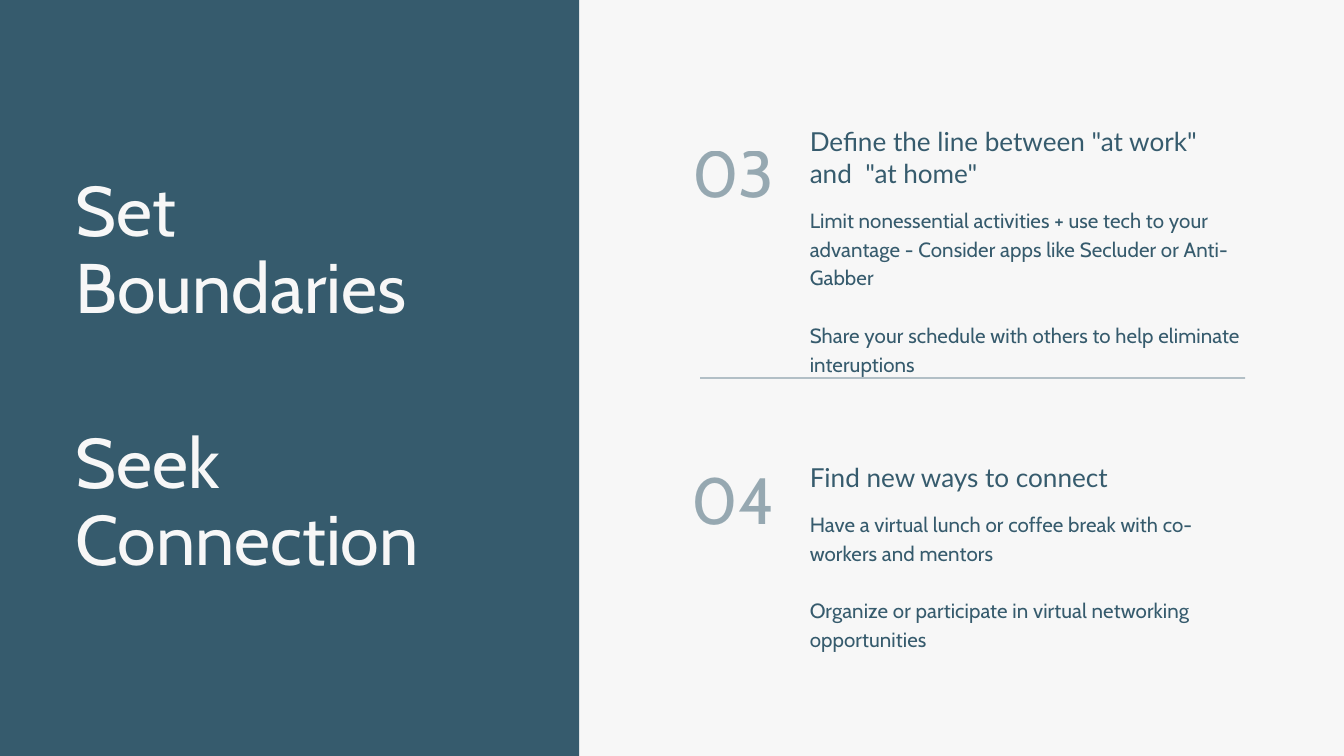
from pptx import Presentation
from pptx.dml.color import RGBColor
from pptx.enum.shapes import MSO_SHAPE as Shape
from pptx.enum.text import MSO_ANCHOR as Anchor, MSO_AUTO_SIZE as Auto, PP_ALIGN as Align
from pptx.oxml.ns import qn
from pptx.util import Inches, Pt
from lxml import etree

TEAL = RGBColor(0x36, 0x5B, 0x6D)
PALE = RGBColor(0xF7, 0xF7, 0xF7)


def place(box, left, top, width, height):
    box.left, box.top = Inches(left), Inches(top)
    box.width, box.height = Inches(width), Inches(height)


def write(box, lines, font, size, lead, color, align=Align.LEFT, track=0):
    """Fill a box with plain paragraphs, one blank line's height apart."""
    frame = box.text_frame
    frame.word_wrap = True
    frame.auto_size = Auto.NONE
    frame.vertical_anchor = Anchor.TOP
    frame.margin_left = frame.margin_right = 0
    frame.margin_top = frame.margin_bottom = 0
    frame.text = "\n".join(lines)
    for i, para in enumerate(frame.paragraphs):
        para.alignment = align
        para.line_spacing = Pt(lead)
        para.space_before = Pt(lead if i else 0)
        para.space_after = Pt(0)
        props = para._p.get_or_add_pPr()
        props.set("marL", "0")
        props.set("indent", "0")
        etree.SubElement(props, qn("a:buNone"))
        for run in para.runs:
            run.font.name = font
            run.font.size = Pt(size)
            run.font.bold = False
            run.font.color.rgb = color
            if track:
                run._r.get_or_add_rPr().set("spc", str(track))


prs = Presentation()
prs.slide_width, prs.slide_height = Inches(20), Inches(11.25)
slide = prs.slides.add_slide(prs.slide_layouts[4])  # title, two heads, two bodies
slide.background.fill.solid()
slide.background.fill.fore_color.rgb = PALE
holders = slide.placeholders

# Side panel and divider, both behind the text
for area in [(0, 0, 8.62, 11.25), (10.42, 5.62, 8.11, 0.01)]:
    block = slide.shapes.add_shape(Shape.RECTANGLE, *map(Inches, area))
    block.shadow.inherit = False
    block.fill.solid()
    block.fill.fore_color.rgb = TEAL
    block.line.fill.background()
    slide.shapes._spTree.insert(2, block._element)

# Panel titles
title = slide.shapes.title
place(title, 1.12, 2.58, 6.39, 2.31)
second = slide.shapes.add_textbox(0, 0, 0, 0)
place(second, 1.12, 6.33, 6.91, 2.31)
for box, text in [(title, "Set Boundaries"), (second, "Seek Connection")]:
    write(box, [text], "Cabin", 75.2, 82.7, PALE)

# Numbered tips: number and its top, head and its top and height, body likewise
tips = [
    ("03", 2.07, 'Define the line between "at work" and  "at home"', 1.87, 0.92,
     ["Limit nonessential activities + use tech to your advantage"
      " - Consider apps like Secluder or Anti-Gabber",
      "Share your schedule with others to help eliminate interuptions"], 3.03, 2.49),
    ("04", 6.93, "Find new ways to connect", 6.86, 0.46,
     ["Have a virtual lunch or coffee break with co-workers and mentors",
      "Organize or participate in virtual networking opportunities"], 7.56, 2.07),
]
for i, (num, num_top, head, head_top, head_high, body, body_top, body_high) in enumerate(tips):
    head_box, body_box = holders[1 + 2 * i], holders[2 + 2 * i]
    place(head_box, 12.05, head_top, 6.48, head_high)
    write(head_box, [head], "Lato", 28, 33.6, TEAL)
    place(body_box, 12.05, body_top, 6.48, body_high)
    write(body_box, body, "Cabin", 22, 30.8, TEAL, track=10)

    num_box = slide.shapes.add_textbox(0, 0, 0, 0)
    place(num_box, 10, num_top, 1.53, 1.1)
    write(num_box, [num], "Cabin", 70, 77, TEAL, Align.RIGHT, track=30)
    for tint in num_box._element.iter(qn("a:srgbClr")):
        etree.SubElement(tint, qn("a:alpha")).set("val", "50000")

prs.save("out.pptx")
